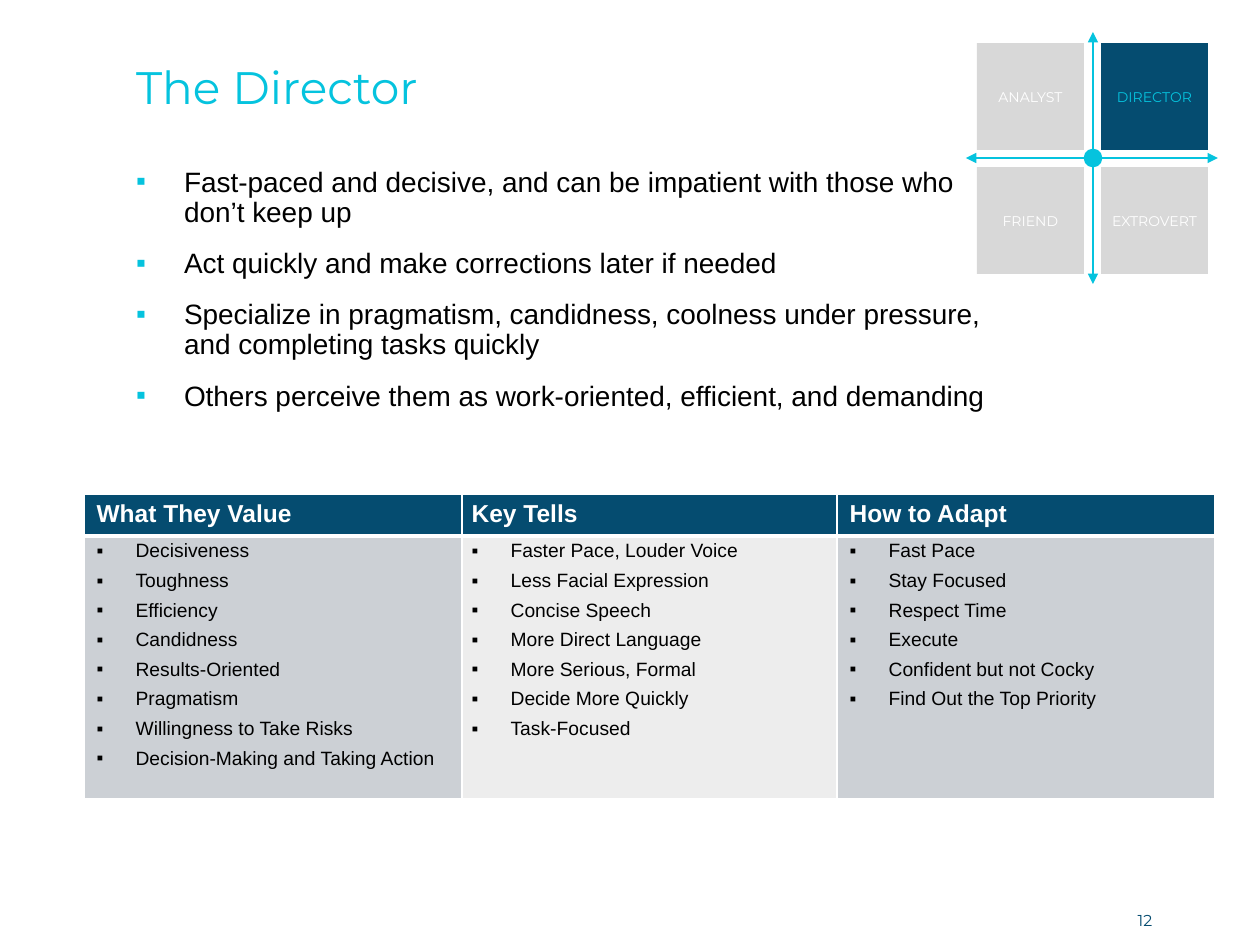
from dataclasses import dataclass

from lxml.etree import SubElement
from pptx import Presentation
from pptx.dml.color import RGBColor
from pptx.enum.shapes import MSO_CONNECTOR, MSO_SHAPE
from pptx.enum.text import MSO_ANCHOR, PP_ALIGN
from pptx.oxml.ns import qn
from pptx.util import Pt

# Content
TITLE = "The Director"
PAGE_NUMBER = "12"
TRAITS = [
    "Fast-paced and decisive, and can be impatient with those who don’t keep up",
    "Act quickly and make corrections later if needed",
    "Specialize in pragmatism, candidness, coolness under pressure, and completing tasks quickly",
    "Others perceive them as work-oriented, efficient, and demanding",
]
QUADRANTS = [["ANALYST", "DIRECTOR"], ["FRIEND", "EXTROVERT"]]
ACTIVE_QUADRANT = "DIRECTOR"


@dataclass(frozen=True)
class Theme:
    navy: str = "054C70"
    cyan: str = "05C3DE"
    tile: str = "D8D8D8"
    gray: str = "CCD0D5"
    pale: str = "EDEDED"
    white: str = "FFFFFF"
    black: str = "000000"
    heading_font: str = "Montserrat"
    body_font: str = "Arial"
    title_size: int = 26
    body_size: int = 16
    header_size: int = 14
    item_size: int = 11
    page_size: int = 9
    tile_size: int = 8
    axis_width: float = 1.5


THEME = Theme()

# Tables from back to front: heading, left edge, fill, items
TABLES = [
    ("Key Tells", 459, THEME.pale, [
        "Faster Pace, Louder Voice", "Less Facial Expression", "Concise Speech",
        "More Direct Language", "More Serious, Formal", "Decide More Quickly",
        "Task-Focused"]),
    ("What They Value", 84, THEME.gray, [
        "Decisiveness", "Toughness", "Efficiency", "Candidness",
        "Results-Oriented", "Pragmatism", "Willingness to Take Risks",
        "Decision-Making and Taking Action"]),
    ("How to Adapt", 837, THEME.gray, [
        "Fast Pace", "Stay Focused", "Respect Time", "Execute",
        "Confident but not Cocky", "Find Out the Top Priority"]),
]
TABLE_TOP, TABLE_WIDTH, ROW_HEIGHTS = 494, 378, (42, 263)

# Quadrant diagram
TILE_LEFT, TILE_TOP, TILE_SIDE, TILE_PITCH = 977, 43, 107, 124
CENTER_X, CENTER_Y, HUB = 1093, 158, 16
AXES = [  # start, end, end that carries the arrow
    ((CENTER_X, 32), (CENTER_X, 156), "headEnd"),
    ((966, CENTER_Y), (1085, CENTER_Y), "headEnd"),
    ((CENTER_X, 166), (CENTER_X, 284), "tailEnd"),
    ((1095, CENTER_Y), (1218, CENTER_Y), "tailEnd"),
]


def px(length):
    return round(length * 914400 / 126)


def rgb(color):
    return RGBColor.from_string(color)


def fill_solid(target, color):
    target.fill.solid()
    target.fill.fore_color.rgb = rgb(color)


def add_bullet(paragraph, color, indent):
    properties = paragraph._p.get_or_add_pPr()
    properties.set("marL", str(px(indent)))
    properties.set("indent", str(-px(indent)))
    bullet_color = SubElement(properties, qn("a:buClr"))
    SubElement(bullet_color, qn("a:srgbClr"), val=color)
    SubElement(properties, qn("a:buFont"), typeface=THEME.body_font)
    SubElement(properties, qn("a:buChar"), char="▪")


def write_text(frame, lines, *, size, color, font=THEME.body_font, bold=False,
               align=PP_ALIGN.LEFT, spacing=None, before=None, after=None,
               bullet=None, indent=0):
    for index, line in enumerate(lines):
        paragraph = frame.add_paragraph() if index else frame.paragraphs[0]
        if bullet:
            add_bullet(paragraph, bullet, indent)
        paragraph.alignment = align
        if spacing:
            paragraph.line_spacing = spacing
        if before and index:
            paragraph.space_before = Pt(before)
        if after:
            paragraph.space_after = Pt(after)
        run = paragraph.add_run()
        run.text = line
        run.font.name = font
        run.font.size = Pt(size)
        run.font.bold = bold
        run.font.color.rgb = rgb(color)


def add_text_box(slide, box, lines, anchor=MSO_ANCHOR.TOP, **text_format):
    frame = slide.shapes.add_textbox(*map(px, box)).text_frame
    frame.word_wrap = True
    frame.vertical_anchor = anchor
    frame.margin_left = frame.margin_top = frame.margin_right = frame.margin_bottom = 0
    write_text(frame, lines, **text_format)


def set_borders(cell, **widths):
    properties = cell._tc.get_or_add_tcPr()
    for position, side in enumerate(("lnL", "lnR", "lnT", "lnB")):
        border = SubElement(properties, qn(f"a:{side}"), w=str(Pt(widths.get(side, 1))))
        fill = SubElement(border, qn("a:solidFill"))
        SubElement(fill, qn("a:srgbClr"), val=THEME.white)
        properties.insert(position, border)


def add_list_table(slide, heading, left, fill, items):
    box = (left, TABLE_TOP, TABLE_WIDTH, sum(ROW_HEIGHTS))
    table = slide.shapes.add_table(2, 1, *map(px, box)).table
    table.horz_banding = False
    for row, height in zip(table.rows, ROW_HEIGHTS):
        row.height = px(height)
    header, body = table.cell(0, 0), table.cell(1, 0)
    fill_solid(header, THEME.navy)
    set_borders(header, lnB=3)
    write_text(header.text_frame, [heading], size=THEME.header_size,
               color=THEME.white, bold=True)
    fill_solid(body, fill)
    set_borders(body, lnT=3)
    write_text(body.text_frame, items, size=THEME.item_size, color=THEME.black,
               spacing=0.9, before=1.9, after=4, bullet=THEME.black, indent=39)


def add_filled_shape(shapes, kind, box, color):
    shape = shapes.add_shape(kind, *map(px, box))
    shape.shadow.inherit = False
    fill_solid(shape, color)
    shape.line.fill.background()
    return shape


def add_axis(shapes, start, end, arrow_end):
    axis = shapes.add_connector(MSO_CONNECTOR.STRAIGHT, *map(px, start + end))
    axis.line.color.rgb = rgb(THEME.cyan)
    axis.line.width = Pt(THEME.axis_width)
    SubElement(axis.line._get_or_add_ln(), qn(f"a:{arrow_end}"), type="triangle")
    SubElement(axis._element.spPr, qn("a:effectLst"))


def add_quadrants(slide):
    shapes = slide.shapes.add_group_shape().shapes
    for row, labels in enumerate(QUADRANTS):
        for column, label in enumerate(labels):
            active = label == ACTIVE_QUADRANT
            box = (TILE_LEFT + column * TILE_PITCH, TILE_TOP + row * TILE_PITCH,
                   TILE_SIDE, TILE_SIDE)
            tile = add_filled_shape(shapes, MSO_SHAPE.RECTANGLE, box,
                                    THEME.navy if active else THEME.tile)
            tile.text_frame.word_wrap = False
            tile.text_frame.vertical_anchor = MSO_ANCHOR.MIDDLE
            write_text(tile.text_frame, [label], size=THEME.tile_size,
                       font=THEME.heading_font, align=PP_ALIGN.CENTER,
                       color=THEME.cyan if active else THEME.white)
    hub_box = (CENTER_X - HUB / 2, CENTER_Y - HUB / 2, HUB, HUB)
    hub = add_filled_shape(shapes, MSO_SHAPE.OVAL, hub_box, THEME.cyan)
    hub.line.color.rgb = rgb(THEME.cyan)
    hub.line.width = Pt(THEME.axis_width)
    for axis in AXES:
        add_axis(shapes, *axis)


def main():
    presentation = Presentation()
    presentation.slide_width, presentation.slide_height = px(1260), px(945)
    slide = presentation.slides.add_slide(presentation.slide_layouts[6])
    # Page number, title and traits
    add_text_box(slide, (1124, 911, 42, 19), [PAGE_NUMBER], size=THEME.page_size,
                 color=THEME.navy, font=THEME.heading_font, align=PP_ALIGN.CENTER)
    add_text_box(slide, (136, 40, 1029, 102), [TITLE], anchor=MSO_ANCHOR.MIDDLE,
                 size=THEME.title_size, color=THEME.cyan, font=THEME.heading_font,
                 spacing=0.85)
    add_text_box(slide, (136, 168, 864, 284), TRAITS, size=THEME.body_size,
                 color=THEME.black, spacing=0.9, after=12, bullet=THEME.cyan, indent=48)
    # Lists and diagram
    for table in TABLES:
        add_list_table(slide, *table)
    add_quadrants(slide)
    presentation.save("out.pptx")


if __name__ == "__main__":
    main()
